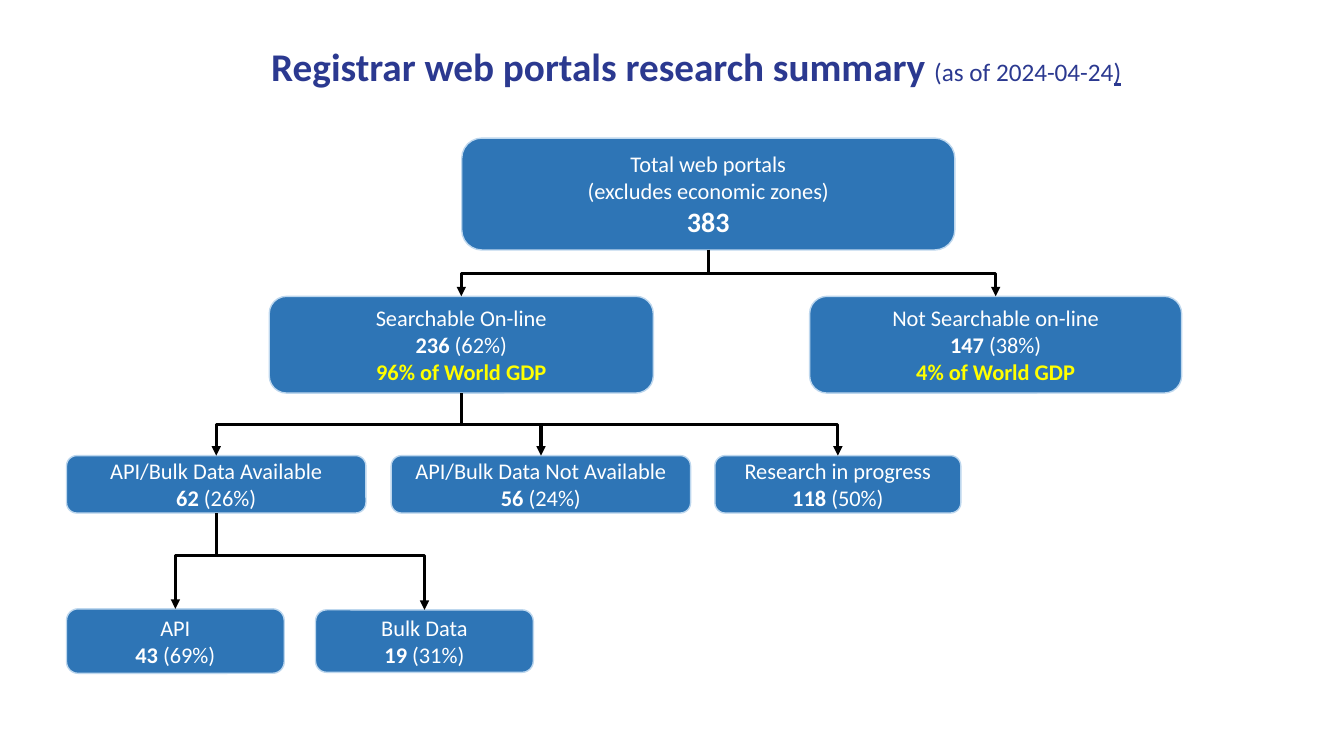
from pptx import Presentation
from pptx.dml.color import RGBColor
from pptx.enum.shapes import MSO_CONNECTOR as Connector, MSO_SHAPE as Shape
from pptx.enum.text import MSO_ANCHOR as Anchor, MSO_AUTO_SIZE as AutoSize, PP_ALIGN as Align
from pptx.oxml.ns import qn
from pptx.util import Inches, Pt
from lxml.etree import SubElement

NAVY = RGBColor(0x2B, 0x39, 0x90)
BLUE = RGBColor(0x2E, 0x75, 0xB6)
PALE_BLUE = RGBColor(0xBD, 0xD7, 0xEE)
WHITE = RGBColor(0xFF, 0xFF, 0xFF)
YELLOW = RGBColor(0xFF, 0xFF, 0x00)
BLACK = RGBColor(0, 0, 0)

TOP_SITE, BOTTOM_SITE = 0, 2  # connection sites of a rounded rectangle


class TreeSlide:
    font_name = "Calibri"
    text_size = 16
    corner = 0.179

    def __init__(self, presentation):
        self.slide = presentation.slides.add_slide(presentation.slide_layouts[5])

    def add_run(self, paragraph, text, size=text_size, color=WHITE, bold=False, underline=None):
        run = paragraph.add_run()
        run.text = text
        font = run.font
        font.name, font.size, font.bold = self.font_name, Pt(size), bold
        font.color.rgb = color
        font.underline = underline

    def title(self, left, top, width, height, runs):
        shape = self.slide.shapes.title
        shape.left, shape.top = Inches(left), Inches(top)
        shape.width, shape.height = Inches(width), Inches(height)
        frame = shape.text_frame
        frame.word_wrap = True
        frame.auto_size = AutoSize.NONE
        frame.vertical_anchor = Anchor.MIDDLE
        paragraph = frame.paragraphs[0]
        paragraph.alignment = Align.LEFT
        paragraph.line_spacing = 1.0
        for text, style in runs:
            self.add_run(paragraph, text, color=NAVY, **style)

    def box(self, left, top, width, height, lines):
        shape = self.slide.shapes.add_shape(
            Shape.ROUNDED_RECTANGLE, Inches(left), Inches(top), Inches(width), Inches(height))
        shape.shadow.inherit = False
        shape.adjustments[0] = self.corner
        shape.fill.solid()
        shape.fill.fore_color.rgb = BLUE
        shape.line.color.rgb = PALE_BLUE
        shape.line.width = Pt(1)
        frame = shape.text_frame
        frame.word_wrap = True
        frame.vertical_anchor = Anchor.MIDDLE
        for index, runs in enumerate(lines):
            paragraph = frame.add_paragraph() if index else frame.paragraphs[0]
            paragraph.alignment = Align.CENTER
            for text, style in runs:
                self.add_run(paragraph, text, **style)
        return shape

    def count_box(self, left, top, width, height, label, count, share, gdp=None):
        lines = [[(label, {})], [(count, {"bold": True}), (f" ({share})", {})]]
        if gdp:
            lines.append([(f"{gdp} of World GDP", {"bold": True, "color": YELLOW})])
        return self.box(left, top, width, height, lines)

    def branch(self, parent, child, bend=0.5):
        """Elbow arrow that leaves the parent downwards and enters the child from above."""
        start_x, start_y = parent.left + parent.width // 2, parent.top + parent.height
        end_x, end_y = child.left + child.width // 2, child.top
        connector = self.slide.shapes.add_connector(Connector.ELBOW, start_x, start_y, end_x, end_y)
        connector.begin_connect(parent, BOTTOM_SITE)
        connector.end_connect(child, TOP_SITE)
        connector.line.color.rgb = BLACK
        connector.line.width = Pt(2.25)

        # A quarter turn makes the first leg vertical: the frame swaps its sides
        run, drop = abs(end_x - start_x), end_y - start_y
        connector.left = (start_x + end_x - drop) // 2
        connector.top = (start_y + end_y - run) // 2
        connector.width, connector.height = drop, run
        properties = connector._element.spPr
        frame = properties.find(qn("a:xfrm"))
        for flip in ("flipH", "flipV"):
            frame.attrib.pop(flip, None)
        to_right = end_x > start_x
        frame.set("rot", str((270 if to_right else 90) * 60000))
        if to_right:
            frame.set("flipH", "1")

        guides = properties.find(qn("a:prstGeom")).find(qn("a:avLst"))
        SubElement(guides, qn("a:gd"), name="adj1", fmla=f"val {round(bend * 100000)}")
        line = properties.find(qn("a:ln"))
        SubElement(line, qn("a:tailEnd"), type="triangle")
        SubElement(properties, qn("a:effectLst"))


def main():
    presentation = Presentation()
    presentation.slide_width, presentation.slide_height = Inches(13.33), Inches(7.5)
    tree = TreeSlide(presentation)

    # Title
    tree.title(2.59, 0.37, 8.74, 0.57, [
        ("Registrar web portals research summary ", {"size": 28, "bold": True}),
        ("(as of 2024-04-24", {"size": 18}),
        (")", {"size": 18, "underline": True}),
    ])

    # All portals
    total = tree.box(4.58, 1.37, 4.89, 1.11, [
        [("Total web portals", {})],
        [("(excludes economic zones)", {})],
        [("383", {"size": 20, "bold": True})],
    ])

    # Searchable or not
    searchable = tree.count_box(2.67, 2.94, 3.81, 0.96, "Searchable On-line", "236", "62%", "96%")
    not_searchable = tree.count_box(
        8.03, 2.94, 3.69, 0.96, "Not Searchable on-line", "147", "38%", "4%")

    # Data availability
    row_top, row_height = 4.52, 0.57
    available = tree.count_box(
        0.66, row_top, 2.97, row_height, "API/Bulk Data Available", "62", "26%")
    not_available = tree.count_box(
        3.88, row_top, 2.97, row_height, "API/Bulk Data Not Available", "56", "24%")
    in_progress = tree.count_box(
        7.09, row_top, 2.44, row_height, "Research in progress", "118", "50%")

    # Kind of access
    api = tree.count_box(0.66, 6.04, 2.16, 0.64, "API", "43", "69%")
    bulk_data = tree.count_box(3.13, 6.05, 2.16, 0.62, "Bulk Data", "19", "31%")

    # Branches
    for parent, children, bend in (
        (total, (searchable, not_searchable), 0.5),
        (searchable, (available, not_available, in_progress), 0.5),
        (available, (api, bulk_data), 0.44),
    ):
        for child in children:
            tree.branch(parent, child, bend)

    presentation.save("out.pptx")


if __name__ == "__main__":
    main()
